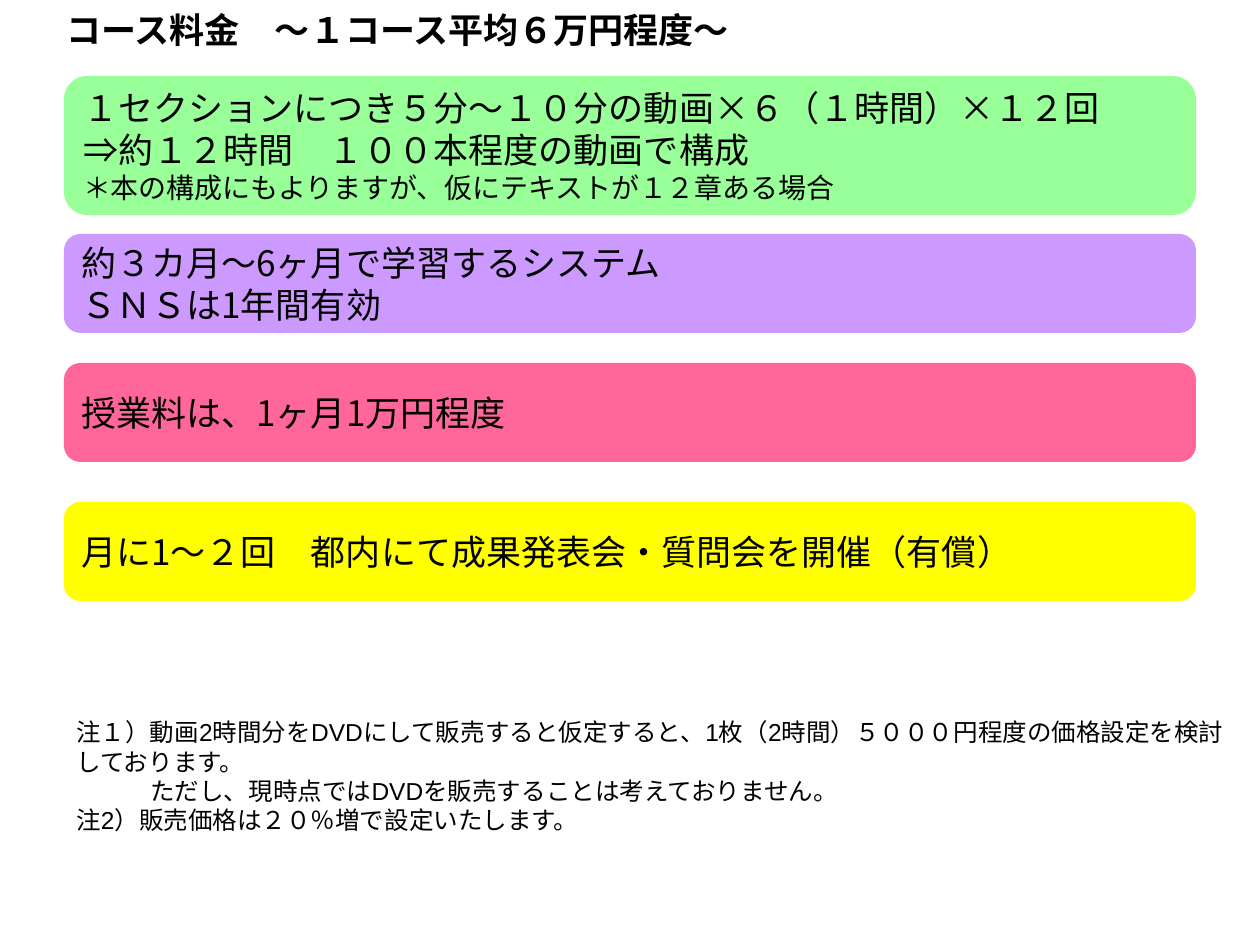
from typing import NamedTuple

from pptx import Presentation
from pptx.dml.color import RGBColor
from pptx.enum.shapes import MSO_SHAPE
from pptx.enum.text import MSO_ANCHOR, PP_ALIGN
from pptx.oxml.ns import qn
from pptx.util import Emu, Pt

PX_PER_INCH = 126
JP_FONT = "Noto Sans CJK JP"
BLACK = RGBColor(0x00, 0x00, 0x00)
GREEN = RGBColor(0x99, 0xFF, 0x99)
PURPLE = RGBColor(0xCC, 0x99, 0xFF)
PINK = RGBColor(0xFF, 0x66, 0x99)
YELLOW = RGBColor(0xFF, 0xFF, 0x00)

BOX_LEFT, BOX_WIDTH = 64, 1132


class Line(NamedTuple):
    text: str
    size: int = 20
    indent: int = 0


class Box(NamedTuple):
    top: int
    height: int
    fill: RGBColor
    lines: list[Line]


BOXES = [
    Box(76, 139, GREEN, [
        Line("１セクションにつき５分～１０分の動画×６（１時間）×１２回"),
        Line("⇒約１２時間　１００本程度の動画で構成"),
        Line("＊本の構成にもよりますが、仮にテキストが１２章ある場合", 16),
    ]),
    Box(234, 99, PURPLE, [
        Line("約３カ月～6ヶ月で学習するシステム"),
        Line("ＳＮＳは1年間有効"),
    ]),
    Box(363, 99, PINK, [Line("授業料は、1ヶ月1万円程度")]),
    Box(502, 99, YELLOW, [Line("月に1～２回　都内にて成果発表会・質問会を開催（有償）")]),
]

NOTES = [
    Line("注１）動画2時間分をDVDにして販売すると仮定すると、1枚（2時間）５０００円程度の価格設定を検討しております。", 14),
    Line("ただし、現時点ではDVDを販売することは考えておりません。", 14, 74),
    Line("注2）販売価格は２０％増で設定いたします。", 14),
]


def px(n: int) -> Emu:
    return Emu(round(n * 914400 / PX_PER_INCH))


def write(tf, lines: list[Line], font: str, anchor, bold: bool = False) -> None:
    tf.word_wrap = True
    tf.vertical_anchor = anchor
    tf.text = "\n".join(line.text for line in lines)
    for p, line in zip(tf.paragraphs, lines):
        p.alignment = PP_ALIGN.LEFT
        if line.indent:
            p._p.get_or_add_pPr().set("marL", str(px(line.indent)))
        r = p.runs[0]
        r.font.name = font
        r.font.size = Pt(line.size)
        r.font.bold = bold
        r.font.color.rgb = BLACK
        # East Asian typeface follows the Latin one
        ea = r._r.get_or_add_rPr().makeelement(qn("a:ea"), {"typeface": JP_FONT})
        r._r.rPr.find(qn("a:latin")).addnext(ea)


def add_box(s, box: Box) -> None:
    sp = s.shapes.add_shape(MSO_SHAPE.ROUNDED_RECTANGLE, px(BOX_LEFT), px(box.top),
                            px(BOX_WIDTH), px(box.height))
    sp.shadow.inherit = False
    sp.fill.solid()
    sp.fill.fore_color.rgb = box.fill
    sp.line.fill.background()
    write(sp.text_frame, box.lines, JP_FONT, MSO_ANCHOR.MIDDLE)


def main() -> None:
    prs = Presentation()
    prs.slide_width, prs.slide_height = px(1260), px(945)
    s = prs.slides.add_slide(prs.slide_layouts[6])

    # Heading
    title = s.shapes.add_textbox(px(54), px(0), px(1134), px(58))
    write(title.text_frame, [Line("コース料金　～１コース平均６万円程度～")],
          "Calibri", MSO_ANCHOR.MIDDLE, bold=True)

    # Course conditions
    for box in BOXES:
        add_box(s, box)

    # Footnotes
    notes = s.shapes.add_textbox(px(BOX_LEFT), px(711), px(1196), px(101))
    write(notes.text_frame, NOTES, "Arial", MSO_ANCHOR.TOP)

    prs.save("out.pptx")


if __name__ == "__main__":
    main()
